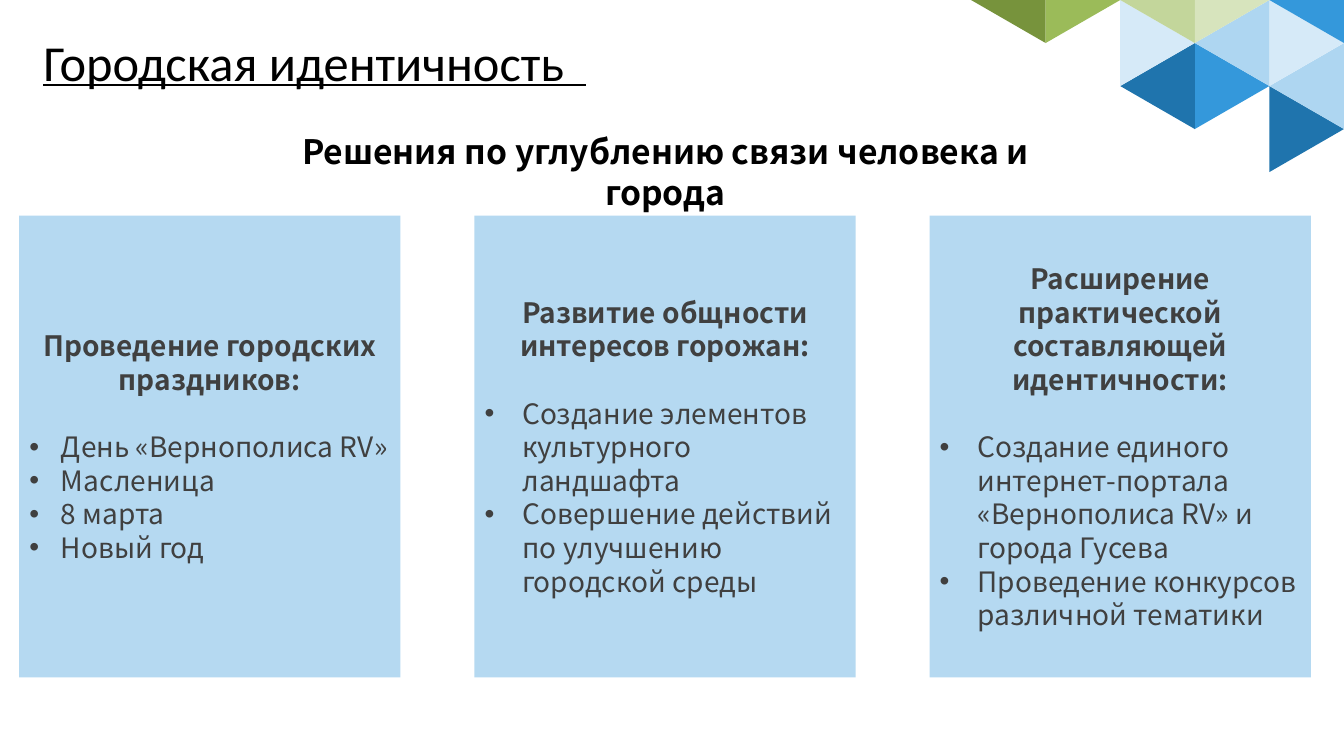
from copy import deepcopy
from dataclasses import dataclass
from typing import NamedTuple

from lxml.etree import SubElement
from pptx import Presentation
from pptx.dml.color import RGBColor
from pptx.enum.shapes import MSO_CONNECTOR, MSO_SHAPE
from pptx.enum.text import MSO_ANCHOR, MSO_AUTO_SIZE, PP_ALIGN
from pptx.oxml.ns import qn
from pptx.util import Inches, Pt

WIDTH = Inches(13.33)
HEIGHT = Inches(7.5)


@dataclass(frozen=True)
class Theme:
    ink: str = "000000"
    text: str = "404040"
    card: str = "85C1E9"
    alpha: int = 60
    navy: str = "1F74AD"
    blue: str = "3498DB"
    sky: str = "AED6F1"
    ice: str = "D6EAF8"
    moss: str = "77933C"
    leaf: str = "9BBB59"
    sage: str = "C3D69B"
    lime: str = "D7E4BD"
    head: str = "Calibri"
    sub: str = "Noto Sans CJK SC"
    body: str = "Noto Sans CJK TC"
    large: int = 36
    mid: int = 24
    small: int = 20
    rule: float = 1.5


class Tile(NamedTuple):
    col: int
    row: int
    fill: str


class Card(NamedTuple):
    title: str
    items: list[str]
    indent: float


THEME = Theme()

TILES = [
    Tile(4, 3, THEME.navy),
    Tile(4, 2, THEME.sky),
    Tile(4, 1, THEME.ice),
    Tile(3, 2, THEME.blue),
    Tile(3, 1, THEME.sky),
    Tile(2, 2, THEME.navy),
    Tile(2, 1, THEME.ice),
    Tile(2, 0, THEME.sage),
    Tile(3, 0, THEME.lime),
    Tile(0, 0, THEME.moss),
    Tile(1, 0, THEME.leaf),
    Tile(4, 0, THEME.blue),
]

CARDS = [
    Card("Проведение городских праздников:",
         ["День «Вернополиса RV»", "Масленица", "8 марта", "Новый год"], 2.35),
    Card("Развитие общности\nинтересов горожан:",
         ["Создание элементов культурного ландшафта",
          "Совершение действий по улучшению городской среды"], 2.82),
    Card("Расширение практической составляющей идентичности:",
         ["Создание единого интернет-портала «Вернополиса RV» и города Гусева",
          "Проведение конкурсов различной тематики"], 2.82),
]


def across(share: float) -> int:
    return round(WIDTH * share / 100)


def down(share: float) -> int:
    return round(HEIGHT * share / 100)


def place(shape, left: float, top: float, width: float, height: float) -> None:
    shape.left, shape.top = across(left), down(top)
    shape.width, shape.height = across(width), down(height)


def paint(shape, fill: str) -> None:
    shape.fill.solid()
    shape.fill.fore_color.rgb = RGBColor.from_string(fill)


def frame(shape, anchor: MSO_ANCHOR, fit: MSO_AUTO_SIZE = MSO_AUTO_SIZE.NONE):
    box = shape.text_frame
    box.word_wrap = True
    box.auto_size = fit
    box.vertical_anchor = anchor
    return box


def write(par, text: str, *, font: str, size: int, color: str,
          bold: bool = False, align: PP_ALIGN = PP_ALIGN.LEFT,
          indent: float = 0, after: float = 0) -> None:
    par.text = text
    par.alignment = align
    par.space_before = Pt(0)
    par.space_after = Pt(after)
    for run in par.runs:
        run.font.name = font
        run.font.size = Pt(size)
        run.font.bold = bold
        run.font.color.rgb = RGBColor.from_string(color)
    for gap in par._p.findall(qn("a:br")):
        gap.append(deepcopy(par.runs[0]._r.rPr))
    props = par._p.get_or_add_pPr()
    props.set("marL", str(across(indent)))
    props.set("indent", str(-across(indent)))
    if indent:
        SubElement(props, qn("a:buChar")).set("char", "•")
    else:
        SubElement(props, qn("a:buNone"))


def draw_tile(slide, tile: Tile) -> None:
    wide, half = across(5.55), down(5.69)
    side = 2 * half
    mid_x = WIDTH - wide * (5 - tile.col) + wide // 2
    mid_y = half * tile.row
    shape = slide.shapes.add_shape(
        MSO_SHAPE.ISOSCELES_TRIANGLE,
        mid_x - side // 2, mid_y - wide // 2, side, wide)
    shape.rotation = 90 if (tile.col + tile.row) % 2 else 270
    shape.shadow.inherit = False
    shape.line.fill.background()
    paint(shape, tile.fill)


def draw_card(shape, card: Card, index: int) -> None:
    place(shape, 1.43 + 33.87 * index, 28.53, 28.36, 61.07)
    paint(shape, THEME.card)
    for tint in shape.element.spPr.iter(qn("a:srgbClr")):
        SubElement(tint, qn("a:alpha")).set("val", str(THEME.alpha * 1000))
    box = frame(shape, MSO_ANCHOR.MIDDLE)
    write(box.paragraphs[0], card.title, font=THEME.body, size=THEME.small,
          color=THEME.text, bold=True, align=PP_ALIGN.CENTER, after=24)
    for item in card.items:
        write(box.add_paragraph(), item, font=THEME.body, size=THEME.small,
              color=THEME.text, indent=card.indent)


def draw_rule(slide) -> None:
    rule = slide.shapes.add_connector(
        MSO_CONNECTOR.STRAIGHT,
        across(3.23), down(11.2), across(43.59), down(11.2))
    rule.line.color.rgb = RGBColor.from_string(THEME.ink)
    rule.line.width = Pt(THEME.rule)
    SubElement(rule.element.spPr, qn("a:effectLst"))


def main() -> None:
    deck = Presentation()
    deck.slide_width, deck.slide_height = WIDTH, HEIGHT
    slide = deck.slides.add_slide(deck.slide_layouts[4])
    for tile in TILES:
        draw_tile(slide, tile)

    title, sub, *cards = slide.placeholders
    place(title, 3.23, 4.13, 86.27, 11.6)
    box = frame(title, MSO_ANCHOR.TOP)
    box.margin_left = box.margin_right = box.margin_top = box.margin_bottom = 0
    write(box.paragraphs[0], "Городская идентичность", font=THEME.head,
          size=THEME.large, color=THEME.ink)

    place(sub, 19.13, 16.67, 60.77, 6.67)
    box = frame(sub, MSO_ANCHOR.TOP, MSO_AUTO_SIZE.SHAPE_TO_FIT_TEXT)
    write(box.paragraphs[0], "Решения по углублению связи человека и города",
          font=THEME.sub, size=THEME.mid, color=THEME.ink, bold=True,
          align=PP_ALIGN.CENTER)

    for index, (shape, card) in enumerate(zip(cards, CARDS)):
        draw_card(shape, card, index)
    draw_rule(slide)
    deck.save("out.pptx")


if __name__ == "__main__":
    main()
